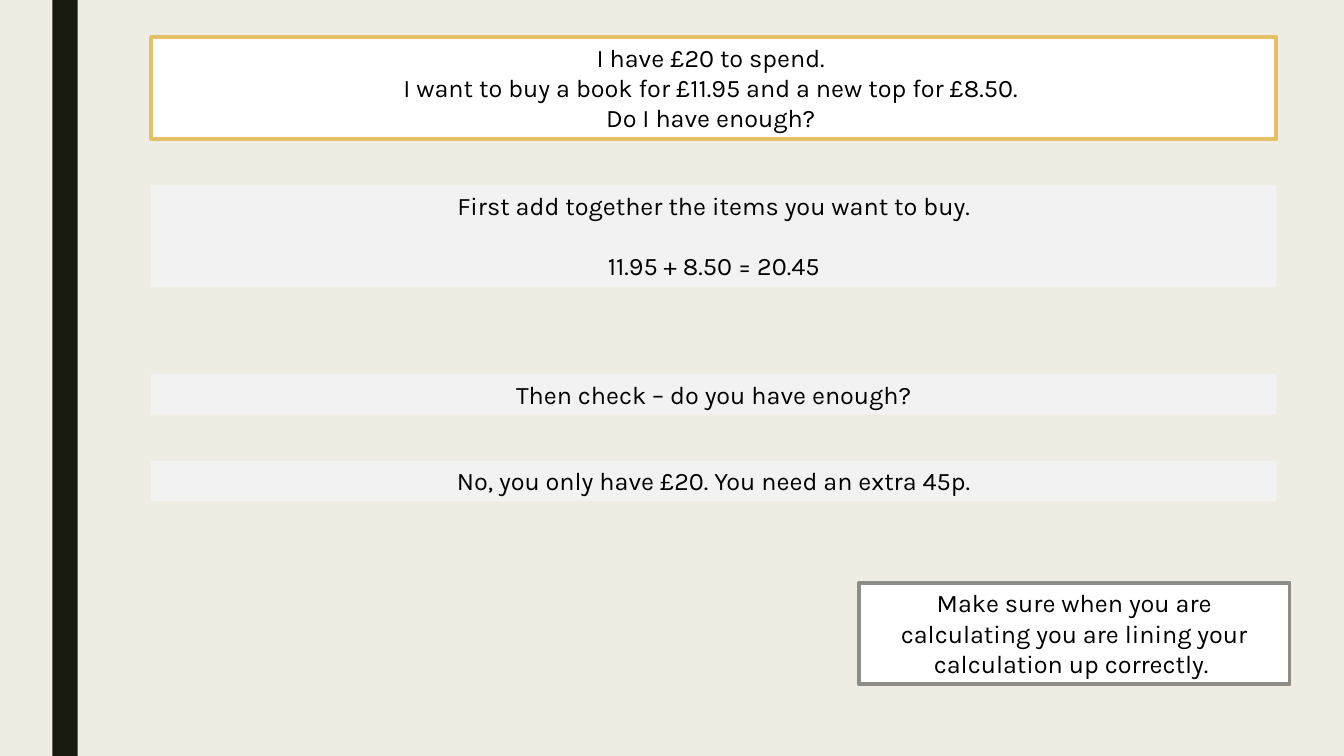
from pptx import Presentation
from pptx.dml.color import RGBColor
from pptx.enum.shapes import MSO_SHAPE
from pptx.enum.text import MSO_ANCHOR, MSO_AUTO_SIZE, PP_ALIGN
from pptx.util import Inches, Pt

RECT = MSO_SHAPE.RECTANGLE
TOP = MSO_ANCHOR.TOP
GROW = MSO_AUTO_SIZE.SHAPE_TO_FIT_TEXT
CENTER = PP_ALIGN.CENTER

PAPER, DARK, INK = "EFEDE3", "191B0E", "000000"
WHITE, PALE, GOLD, GRAY = "FFFFFF", "F2F2F2", "E6C069", "8C8D86"

LEFT, WIDTH = 1.5, 11.16
TALL, LOW = 1.01, 0.4


def color(code):
    return RGBColor.from_string(code)


class Page:
    font = "Karla"
    size = 18
    edge = 2.75

    def __init__(self, deck):
        self.slide = deck.slides.add_slide(deck.slide_layouts[6])
        fill = self.slide.background.fill
        fill.solid()
        fill.fore_color.rgb = color(PAPER)

    def rect(self, left, top, width, height, fill, line=None):
        shape = self.slide.shapes.add_shape(
            RECT, Inches(left), Inches(top), Inches(width), Inches(height))
        shape.shadow.inherit = False
        shape.fill.solid()
        shape.fill.fore_color.rgb = color(fill)
        if line:
            shape.line.color.rgb = color(line)
            shape.line.width = Pt(self.edge)
        else:
            shape.line.fill.background()
        return shape

    def box(self, left, top, width, height, lines, fill=PALE, line=None, gap=0):
        """Add a filled box of centred lines, with gap points between them."""
        frame = self.rect(left, top, width, height, fill, line).text_frame
        frame.word_wrap = True
        frame.auto_size = GROW
        frame.vertical_anchor = TOP
        for i, text in enumerate(lines):
            para = frame.add_paragraph() if i else frame.paragraphs[0]
            para.alignment = CENTER
            para.space_before = Pt(gap if i else 0)
            run = para.add_run()
            run.text = text
            run.font.name = self.font
            run.font.size = Pt(self.size)
            run.font.color.rgb = color(INK)


def main():
    deck = Presentation()
    deck.slide_width, deck.slide_height = Inches(13.33), Inches(7.5)
    page = Page(deck)
    page.rect(0.52, 0, 0.25, 7.5, DARK)
    page.box(LEFT, 0.37, WIDTH, TALL, [
        "I have £20 to spend. ",
        "I want to buy a book for £11.95 and a new top for £8.50. ",
        "Do I have enough? ",
    ], WHITE, GOLD)
    page.box(LEFT, 1.84, WIDTH, TALL, [
        "First add together the items you want to buy.",
        "11.95 + 8.50 = 20.45",
    ], gap=21.5)
    page.box(LEFT, 3.71, WIDTH, LOW, ["Then check – do you have enough?"])
    page.box(8.52, 5.78, 4.27, TALL, [
        "Make sure when you are calculating you are lining your "
        "calculation up correctly. ",
    ], WHITE, GRAY)
    page.box(LEFT, 4.57, WIDTH, LOW,
             ["No, you only have £20. You need an extra 45p."])
    deck.save("out.pptx")


if __name__ == "__main__":
    main()
